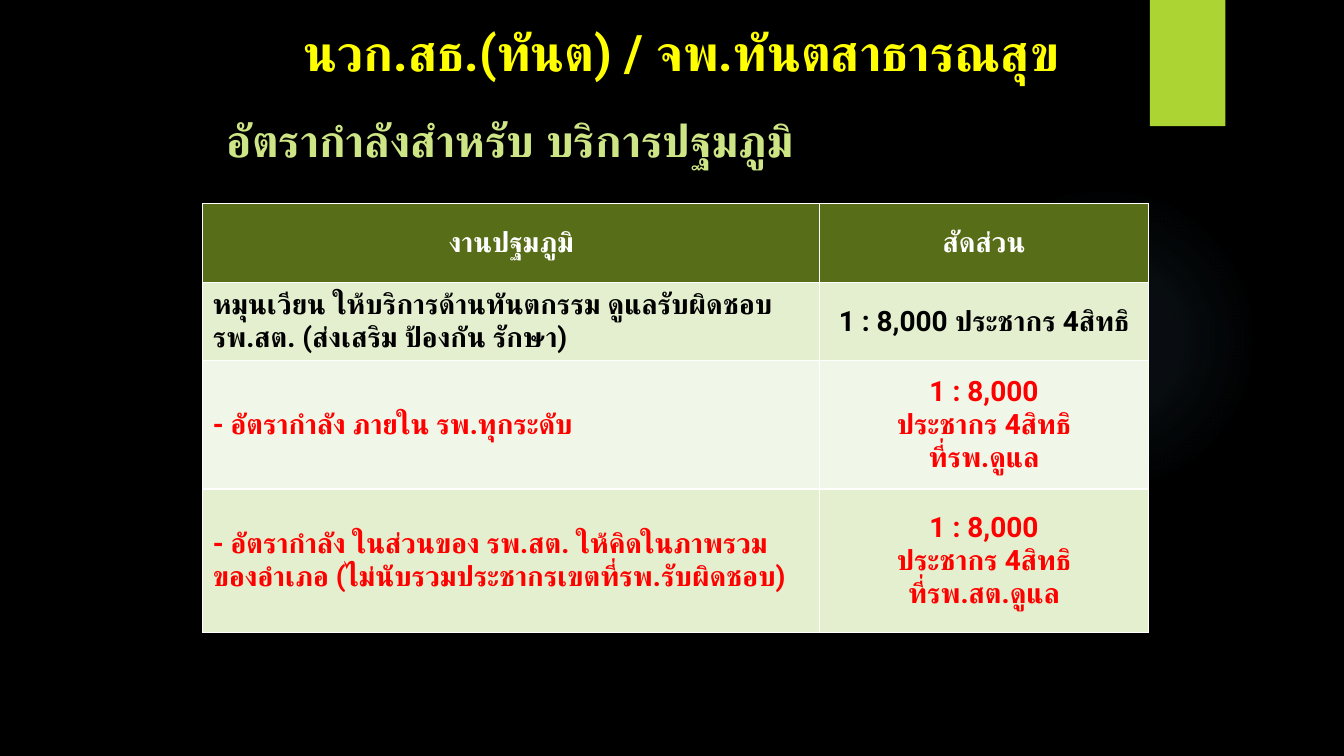
from lxml import etree
from pptx import Presentation
from pptx.dml.color import RGBColor
from pptx.enum.shapes import MSO_SHAPE
from pptx.enum.text import MSO_ANCHOR, MSO_AUTO_SIZE, PP_ALIGN
from pptx.oxml import parse_xml
from pptx.oxml.ns import qn
from pptx.util import Cm, Pt

OVAL, RECTANGLE = MSO_SHAPE.OVAL, MSO_SHAPE.RECTANGLE
TOP, MIDDLE = MSO_ANCHOR.TOP, MSO_ANCHOR.MIDDLE
LEFT, CENTER = PP_ALIGN.LEFT, PP_ALIGN.CENTER
NO_AUTOFIT = MSO_AUTO_SIZE.NONE
NAMESPACE = "http://schemas.openxmlformats.org/drawingml/2006/main"
FONT = "Roboto"
COLORS = {
    "background": "000000", "glow": "7AC4F0", "tab": "ACD433",
    "heading": "FFFF00", "subheading": "CDE585", "header": "576D17",
    "band": "E3EFCE", "light": "F1F7E8", "white": "FFFFFF",
    "black": "000000", "red": "FF0000",
}
COLUMN_WIDTHS = [15.55, 8.28]
ROWS = [
    (1.98, "header", "white", ["งานปฐมภูมิ", "สัดส่วน"]),
    (1.98, "band", "black",
     ["หมุนเวียน ให้บริการด้านทันตกรรม ดูแลรับผิดชอบ รพ.สต. (ส่งเสริม ป้องกัน รักษา)",
      "1 : 8,000 ประชากร 4สิทธิ"]),
    (3.23, "light", "red",
     ["- อัตรากำลัง ภายใน รพ.ทุกระดับ",
      "1 : 8,000\nประชากร 4สิทธิ\nที่รพ.ดูแล"]),
    (3.61, "band", "red",
     ["- อัตรากำลัง ในส่วนของ รพ.สต. ให้คิดในภาพรวมของอำเภอ (ไม่นับรวมประชากรเขตที่รพ.รับผิดชอบ)",
      "1 : 8,000\nประชากร 4สิทธิ\nที่รพ.สต.ดูแล"]),
]


def color(name):
    """Return the named colour of the palette."""
    return RGBColor.from_string(COLORS[name])


def apply(target, values):
    """Set each attribute of the target from a dict."""
    for name, value in values.items():
        setattr(target, name, value)


def write_text(text_frame, text, size, color_name, alignment):
    """Fill a text frame with bold text, one paragraph per line."""
    text_frame.text = text
    for paragraph in text_frame.paragraphs:
        apply(paragraph, {"alignment": alignment, "space_before": Pt(0)})
        for run in paragraph.runs:
            apply(run.font, {"name": FONT, "size": Pt(size), "bold": True})
            run.font.color.rgb = color(color_name)
            script_font = etree.SubElement(run.font._element, qn("a:cs"))
            script_font.set("typeface", FONT)


def add_decoration(slide, left, top, width, height):
    """Place the soft glow and the green tab in the right-hand area."""
    glow = slide.shapes.add_shape(OVAL, left, top + Cm(4.65), Cm(7.82), Cm(7.82))
    tab = slide.shapes.add_shape(RECTANGLE, left + Cm(5.08), top, width, height)
    for shape in (glow, tab):
        shape.shadow.inherit = False
        shape.line.fill.background()
    tab.fill.solid()
    tab.fill.fore_color.rgb = color("tab")
    stops = "".join(
        f'<a:gs pos="{position}000"><a:srgbClr val="{COLORS["glow"]}">'
        f'<a:alpha val="{alpha}000"/></a:srgbClr></a:gs>'
        for position, alpha in [(0, 7), (36, 6), (69, 0)])
    gradient = parse_xml(
        f'<a:gradFill xmlns:a="{NAMESPACE}"><a:gsLst>{stops}</a:gsLst><a:path path="circle">'
        '<a:fillToRect l="50000" t="50000" r="50000" b="50000"/></a:path></a:gradFill>')
    glow._element.spPr.find(qn("a:prstGeom")).addnext(gradient)


def place_heading(placeholder, box, text, size, color_name, alignment, margin):
    """Move a placeholder into its box and write one line of heading."""
    apply(placeholder, dict(zip(("left", "top", "width", "height"), box)))
    frame = placeholder.text_frame
    apply(frame, {
        "word_wrap": True, "auto_size": NO_AUTOFIT, "vertical_anchor": TOP,
        "margin_left": margin, "margin_right": margin, "margin_top": 0, "margin_bottom": 0,
    })
    write_text(frame, text, size, color_name, alignment)
    properties = frame.paragraphs[0]._p.get_or_add_pPr()
    properties.set("marL", "0")
    properties.set("indent", "0")
    etree.SubElement(properties, qn("a:buNone"))


def add_borders(cell):
    """Draw a thin white line on all four sides of a cell."""
    properties = cell._tc.get_or_add_tcPr()
    for index, side in enumerate(("lnL", "lnR", "lnT", "lnB")):
        properties.insert(index, parse_xml(
            f'<a:{side} xmlns:a="{NAMESPACE}" w="{Pt(1)}"><a:solidFill>'
            f'<a:srgbClr val="{COLORS["white"]}"/></a:solidFill></a:{side}>'))


def add_staffing_table(slide, left, top, width, height):
    """Build the table of primary care work and staffing ratios."""
    table = slide.shapes.add_table(
        len(ROWS), len(COLUMN_WIDTHS), left, top, width, height).table
    for column, column_width in zip(table.columns, COLUMN_WIDTHS):
        column.width = Cm(column_width)
    for row, (row_height, fill, text_color, texts) in zip(table.rows, ROWS):
        row.height = Cm(row_height)
        for index, (cell, text) in enumerate(zip(row.cells, texts)):
            cell.vertical_anchor = MIDDLE
            cell.fill.solid()
            cell.fill.fore_color.rgb = color(fill)
            add_borders(cell)
            alignment = CENTER if index or fill == "header" else LEFT
            write_text(cell.text_frame, text, 20, text_color, alignment)


def build_staffing_slide(presentation):
    """Add the slide with its headings, decoration and table."""
    slide = presentation.slides.add_slide(presentation.slide_layouts[1])
    slide.background.fill.solid()
    slide.background.fill.fore_color.rgb = color("background")
    add_decoration(slide, Cm(23.9), 0, Cm(1.9), Cm(3.18))
    place_heading(slide.shapes.title, (Cm(5.74), Cm(0.53), Cm(22.86), Cm(2.29)),
                  "นวก.สธ.(ทันต) / จพ.ทันตสาธารณสุข", 36, "heading", CENTER, Cm(0.25))
    place_heading(slide.placeholders[1], (Cm(5.72), Cm(2.84), Cm(22.86), Cm(2.29)),
                  "อัตรากำลังสำหรับ บริการปฐมภูมิ", 32, "subheading", LEFT, 0)
    add_staffing_table(slide, Cm(5.11), Cm(5.13), Cm(23.83), Cm(10.8))


def main():
    """Create the presentation and save it."""
    presentation = Presentation()
    apply(presentation, {"slide_width": Cm(33.87), "slide_height": Cm(19.05)})
    build_staffing_slide(presentation)
    presentation.save("out.pptx")


if __name__ == "__main__":
    main()
